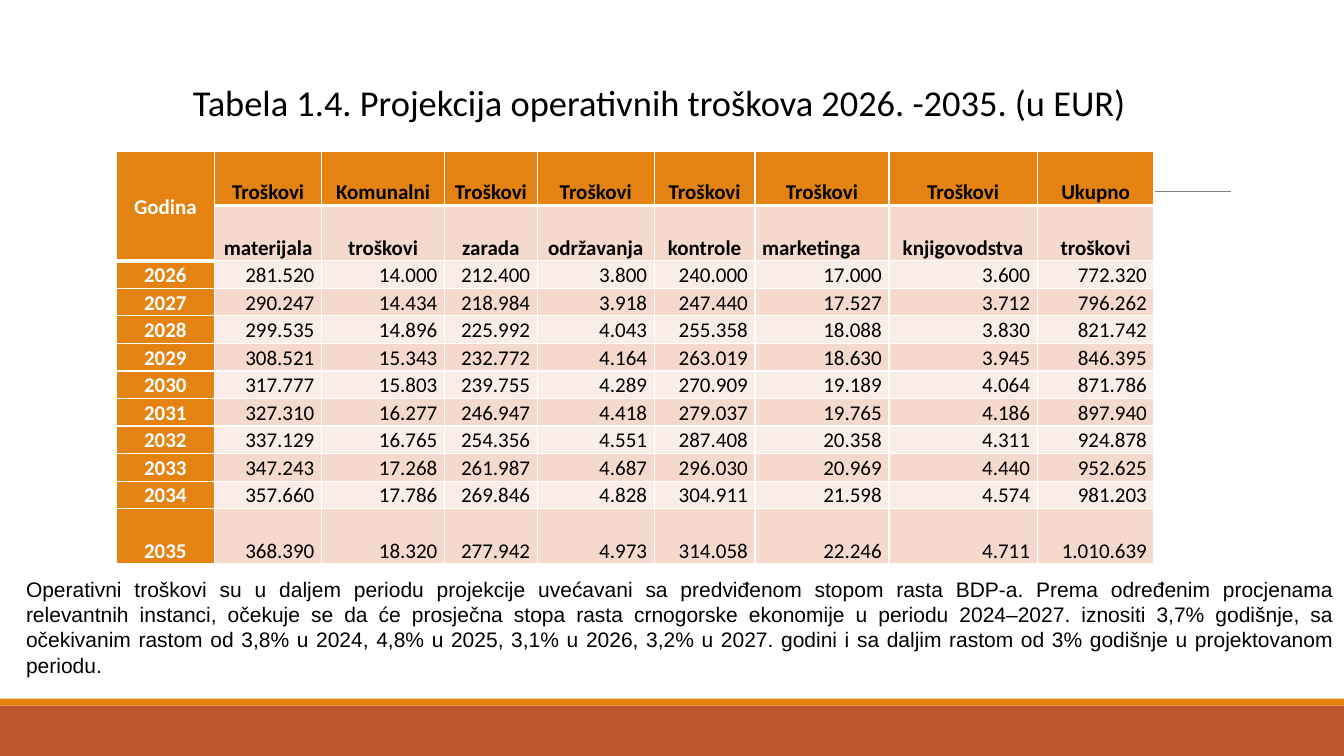
from dataclasses import dataclass

from lxml.etree import SubElement
from pptx import Presentation
from pptx.dml.color import RGBColor
from pptx.enum.shapes import MSO_CONNECTOR as Connector, MSO_SHAPE as Preset
from pptx.enum.text import MSO_ANCHOR as Anchor, MSO_AUTO_SIZE as AutoSize, PP_ALIGN as Align
from pptx.oxml.ns import qn
from pptx.slide import Slide
from pptx.table import _Cell as Cell
from pptx.text.text import TextFrame
from pptx.util import Inches, Pt

WIDTH, HEIGHT = Inches(13.33), Inches(7.5)
ORANGE = RGBColor(0xE4, 0x83, 0x12)
RUST = RGBColor(0xBD, 0x58, 0x2C)
DARK_BAND = RGBColor(0xF5, 0xD9, 0xCC)
LIGHT_BAND = RGBColor(0xFA, 0xED, 0xE7)
GRAY = RGBColor(0x80, 0x80, 0x80)
WHITE = RGBColor(0xFF, 0xFF, 0xFF)
BLACK = RGBColor(0, 0, 0)

TITLE = "Tabela 1.4. Projekcija operativnih troškova 2026. -2035. (u EUR)"
NOTE = (
    "Operativni troškovi su u daljem periodu projekcije uvećavani sa predviđenom stopom rasta "
    "BDP-a. Prema određenim procjenama relevantnih instanci, očekuje se da će prosječna stopa "
    "rasta crnogorske ekonomije u periodu 2024–2027. iznositi 3,7% godišnje, sa očekivanim "
    "rastom od 3,8% u 2024, 4,8% u 2025, 3,1% u 2026, 3,2% u 2027. godini i sa daljim rastom "
    "od 3% godišnje u projektovanom periodu."
)
COSTS = """\
Godina Troškovi Komunalni Troškovi Troškovi Troškovi Troškovi Troškovi Ukupno
- materijala troškovi zarada održavanja kontrole marketinga knjigovodstva troškovi
2026 281.520 14.000 212.400 3.800 240.000 17.000 3.600 772.320
2027 290.247 14.434 218.984 3.918 247.440 17.527 3.712 796.262
2028 299.535 14.896 225.992 4.043 255.358 18.088 3.830 821.742
2029 308.521 15.343 232.772 4.164 263.019 18.630 3.945 846.395
2030 317.777 15.803 239.755 4.289 270.909 19.189 4.064 871.786
2031 327.310 16.277 246.947 4.418 279.037 19.765 4.186 897.940
2032 337.129 16.765 254.356 4.551 287.408 20.358 4.311 924.878
2033 347.243 17.268 261.987 4.687 296.030 20.969 4.440 952.625
2034 357.660 17.786 269.846 4.828 304.911 21.598 4.574 981.203
2035 368.390 18.320 277.942 4.973 314.058 22.246 4.711 1.010.639"""
COST_ROWS = [line.split() for line in COSTS.splitlines()]
HEADER_ROWS = 2
COLUMN_SHARES = [7.35, 7.95, 9.15, 6.9, 8.7, 7.5, 9.97, 11.03, 8.7]
ROW_SHARES = [7.2, 7.3] + [3.6] * 9 + [7.3]


def across(share: float) -> int:
    """Turn a percentage of the slide's width into a length."""
    return round(WIDTH * share / 100)


def down(share: float) -> int:
    """Turn a percentage of the slide's height into a length."""
    return round(HEIGHT * share / 100)


@dataclass(frozen=True)
class Area:
    """A rectangle in percentages of the slide's width and height."""

    left: float
    top: float
    width: float
    height: float

    def box(self) -> tuple[int, int, int, int]:
        return across(self.left), down(self.top), across(self.width), down(self.height)


@dataclass(frozen=True)
class FooterBand:
    area: Area
    color: RGBColor


FOOTER_BANDS = [
    FooterBand(Area(0, 93.33, 100, 6.67), RUST),
    FooterBand(Area(0, 92.4, 100, 0.93), ORANGE),
]
TITLE_AREA = Area(13.58, 9.87, 71.04, 11.2)
TABLE_AREA = Area(8.63, 20, sum(COLUMN_SHARES), sum(ROW_SHARES))
NOTE_AREA = Area(1.2, 75.6, 98.8, 15)


def write(frame: TextFrame, text: str, *, size: float = 15, font: str = "Calibri",
          color: RGBColor = BLACK, bold: bool = False, align: Align = Align.CENTER,
          spacing: float = 1.0) -> None:
    frame.word_wrap = True
    paragraph = frame.paragraphs[0]
    paragraph.alignment = align
    paragraph.line_spacing = spacing
    run = paragraph.add_run()
    run.text = text
    run.font.size = Pt(size)
    run.font.name = font
    run.font.bold = bold
    run.font.color.rgb = color


def draw_footer_band(slide: Slide, band: FooterBand) -> None:
    shape = slide.shapes.add_shape(Preset.RECTANGLE, *band.area.box())
    shape.shadow.inherit = False
    shape.fill.solid()
    shape.fill.fore_color.rgb = band.color
    shape.line.fill.background()


def draw_rule(slide: Slide) -> None:
    rule = slide.shapes.add_connector(
        Connector.STRAIGHT, across(9.83), down(25.33), across(91.6), down(25.33))
    rule.line.color.rgb = GRAY
    rule.line.width = Pt(0.5)
    SubElement(rule._element.spPr, qn("a:effectLst"))


def set_borders(cell: Cell, top: float, bottom: float) -> None:
    """Draw white borders; they must come before the fill in the cell's XML."""
    properties = cell._tc.get_or_add_tcPr()
    for side, points in (("L", 1), ("R", 1), ("T", top), ("B", bottom)):
        border = SubElement(properties, qn(f"a:ln{side}"), w=str(Pt(points)))
        fill = SubElement(border, qn("a:solidFill"))
        SubElement(fill, qn("a:srgbClr"), val=str(WHITE))


def format_cell(cell: Cell, row: int, column: int) -> None:
    is_header, is_year = row < HEADER_ROWS, column == 0
    below_header = row == 1 and not is_year or row == HEADER_ROWS and is_year
    above_body = row == 0 or row == 1 and is_year
    set_borders(cell, 3 if below_header else 1, 3 if above_body else 1)
    cell.fill.solid()
    if row == 0 or is_year:
        cell.fill.fore_color.rgb = ORANGE
    else:
        cell.fill.fore_color.rgb = DARK_BAND if row % 2 else LIGHT_BAND
    cell.margin_left = cell.margin_right = across(0.53)
    cell.margin_top = cell.margin_bottom = 0
    cell.vertical_anchor = Anchor.MIDDLE if row == 0 and is_year else Anchor.BOTTOM
    text = COST_ROWS[row][column]
    if cell.is_spanned:
        return
    if text == "marketinga":
        align = Align.LEFT
    else:
        align = Align.CENTER if is_header or is_year else Align.RIGHT
    write(cell.text_frame, text, color=WHITE if is_year else BLACK,
          bold=is_header or is_year, align=align, spacing=1.07)


def draw_cost_table(slide: Slide) -> None:
    table = slide.shapes.add_table(
        len(ROW_SHARES), len(COLUMN_SHARES), *TABLE_AREA.box()).table
    table.first_row = table.horz_banding = False
    for column, share in zip(table.columns, COLUMN_SHARES):
        column.width = across(share)
    for row, share in zip(table.rows, ROW_SHARES):
        row.height = down(share)
    table.cell(0, 0).merge(table.cell(HEADER_ROWS - 1, 0))
    for row in range(len(ROW_SHARES)):
        for column in range(len(COLUMN_SHARES)):
            format_cell(table.cell(row, column), row, column)


def place_title(slide: Slide) -> None:
    title = slide.shapes.title
    title.left, title.top, title.width, title.height = TITLE_AREA.box()
    title.text_frame.auto_size = AutoSize.NONE
    title.text_frame.vertical_anchor = Anchor.TOP
    write(title.text_frame, TITLE, size=26)


def main() -> None:
    presentation = Presentation()
    presentation.slide_width, presentation.slide_height = WIDTH, HEIGHT
    slide = presentation.slides.add_slide(presentation.slide_layouts.get_by_name("Title Only"))
    for band in FOOTER_BANDS:
        draw_footer_band(slide, band)
    draw_rule(slide)
    draw_cost_table(slide)
    place_title(slide)
    note = slide.shapes.add_textbox(*NOTE_AREA.box())
    write(note.text_frame, NOTE, font="Arial", align=Align.JUSTIFY)
    presentation.save("out.pptx")


if __name__ == "__main__":
    main()
